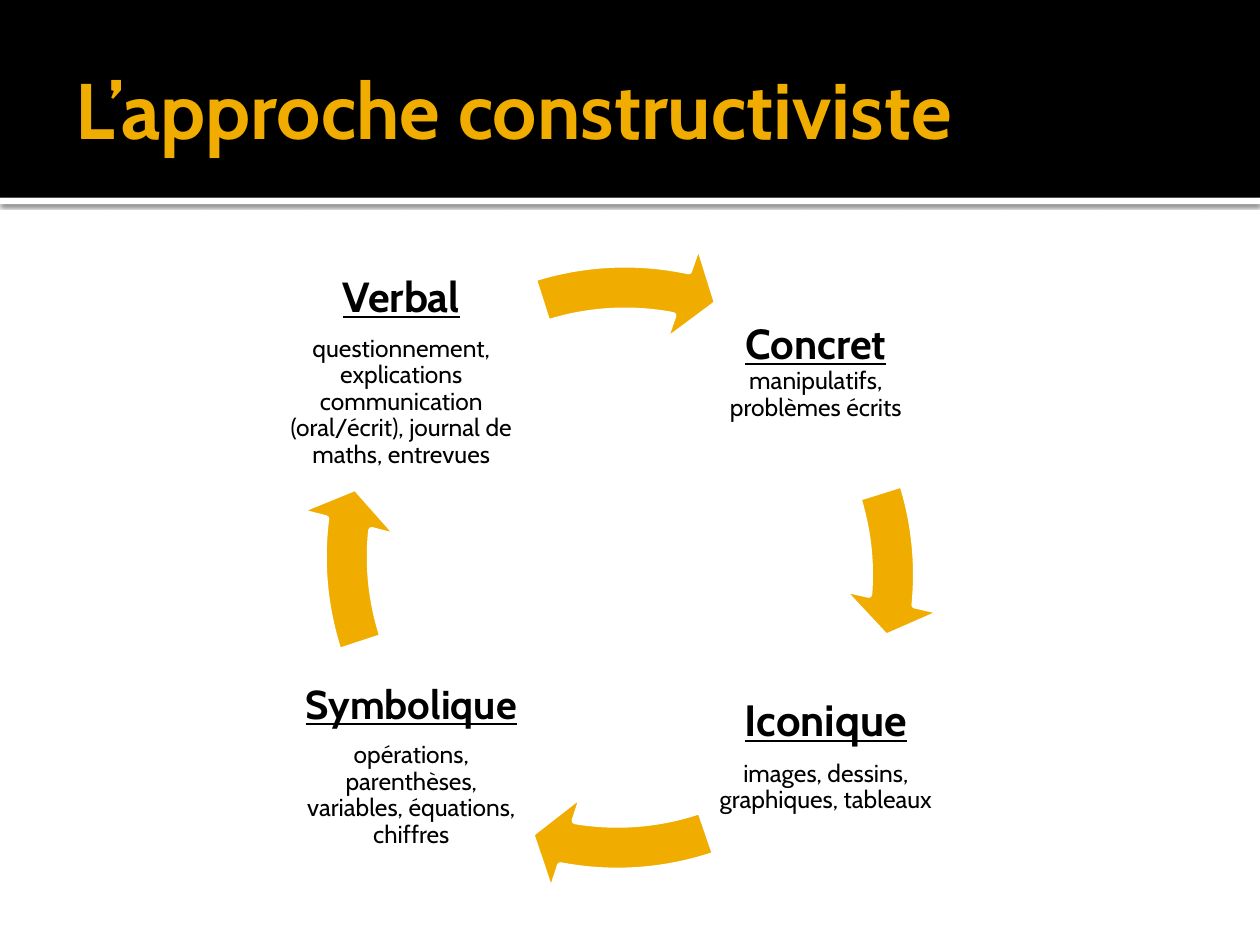
from dataclasses import dataclass

from lxml.etree import SubElement
from pptx import Presentation
from pptx.dml.color import RGBColor
from pptx.enum.shapes import MSO_SHAPE as SHAPE
from pptx.enum.text import MSO_ANCHOR as ANCHOR, PP_ALIGN as ALIGN
from pptx.oxml.ns import qn
from pptx.util import Inches, Pt

COLORS = {"black": "000000", "white": "FFFFFF", "gold": "F0AD00"}
FONT = "Cabin"
LABEL_SIZE = 1.87
ARROW_SIZE = 5.28


@dataclass
class Stage:
    left: float
    top: float
    title: str
    title_size: int
    detail: str
    inline: bool = False


@dataclass
class Arrow:
    left: float
    top: float
    end: float
    start: float


STAGES = [
    Stage(5.54, 2.02, "Concret", 24, "manipulatifs, problèmes écrits", True),
    Stage(5.62, 5.07, "Iconique", 25, "images, dessins, graphiques, tableaux"),
    Stage(2.33, 5.15, "Symbolique", 23,
          "opérations, parenthèses, variables, équations, chiffres"),
    Stage(2.25, 2.02, "Verbal", 24,
          "questionnement, explications communication (oral/écrit), "
          "journal de maths, entrevues"),
]
ARROWS = [
    Arrow(2.23, 1.92, 3.12, 205.55),
    Arrow(2.26, 1.87, 60.16, 42.65),
    Arrow(2.33, 1.78, 112, 97.08),
    Arrow(2.32, 1.86, 168.94, 151.43),
]


def rgb(name: str) -> RGBColor:
    return RGBColor.from_string(COLORS[name])


def add_shape(slide, kind, left: float, top: float, width: float, height: float, color: str):
    s = slide.shapes.add_shape(kind, Inches(left), Inches(top), Inches(width), Inches(height))
    s.shadow.inherit = False
    s.fill.solid()
    s.fill.fore_color.rgb = rgb(color)
    s.line.fill.background()
    return s


def add_shadow(s) -> None:
    effects = s._element.spPr.find(qn("a:effectLst"))
    shadow = SubElement(effects, qn("a:outerShdw"), blurRad=str(Pt(2.5)),
                        dist=str(Pt(0.8)), dir="5400000", rotWithShape="0")
    color = SubElement(shadow, qn("a:srgbClr"), val=COLORS["black"])
    SubElement(color, qn("a:alpha"), val="60000")


def add_text_frame(slide, left: float, top: float, width: float, height: float,
                   insets: tuple[float, float, float, float]):
    tf = slide.shapes.add_textbox(Inches(left), Inches(top), Inches(width),
                                  Inches(height)).text_frame
    tf.word_wrap = True
    tf.vertical_anchor = ANCHOR.MIDDLE
    tf.margin_left, tf.margin_top, tf.margin_right, tf.margin_bottom = map(Inches, insets)
    return tf


def format_run(r, size: int, color: str = "black", bold: bool = False,
               underline: bool = False) -> None:
    r.font.name = FONT
    r.font.size = Pt(size)
    r.font.color.rgb = rgb(color)
    r.font.bold = bold
    r.font.underline = underline


def add_title(slide, text: str) -> None:
    tf = add_text_frame(slide, 0.5, 0.17, 9, 1.37, (0.1, 0.05, 0.05, 0.05))
    tf.text = text
    format_run(tf.paragraphs[0].runs[0], 45, "gold", bold=True)


def add_stage(slide, stage: Stage) -> None:
    tf = add_text_frame(slide, stage.left, stage.top, LABEL_SIZE, LABEL_SIZE, (0.03,) * 4)
    tf.text = stage.title
    p = tf.paragraphs[0]
    format_run(p.runs[0], stage.title_size, bold=True, underline=True)
    if stage.inline:
        r = p.add_run()
        r.text = " "
        format_run(r, stage.title_size, bold=True)
    else:
        p = tf.add_paragraph()
    r = p.add_run()
    r.text = stage.detail
    format_run(r, 14)
    for p in tf.paragraphs:
        p.alignment = ALIGN.CENTER
        p.line_spacing = 0.9
        p.space_after = Pt(8.4)


def add_arrow(slide, arrow: Arrow) -> None:
    s = add_shape(slide, SHAPE.CIRCULAR_ARROW, arrow.left, arrow.top,
                  ARROW_SIZE, ARROW_SIZE, "gold")
    s.line.color.rgb = rgb("white")
    s.line.width = Pt(3.78)
    for i, value in enumerate((0.07, 4.65, arrow.end, arrow.start, 0.08)):
        s.adjustments[i] = value


def main() -> None:
    """Build the slide showing the constructivist cycle."""
    prs = Presentation()
    prs.slide_width, prs.slide_height = Inches(10), Inches(7.5)
    slide = prs.slides.add_slide(prs.slide_layouts[6])
    add_shadow(add_shape(slide, SHAPE.RECTANGLE, 0, 1.57, 10, 0.05, "white"))
    add_shape(slide, SHAPE.RECTANGLE, 0, 0, 10, 1.57, "black")
    add_title(slide, "L’approche constructiviste")
    for stage, arrow in zip(STAGES, ARROWS):
        add_stage(slide, stage)
        add_arrow(slide, arrow)
    prs.save("out.pptx")


if __name__ == "__main__":
    main()
